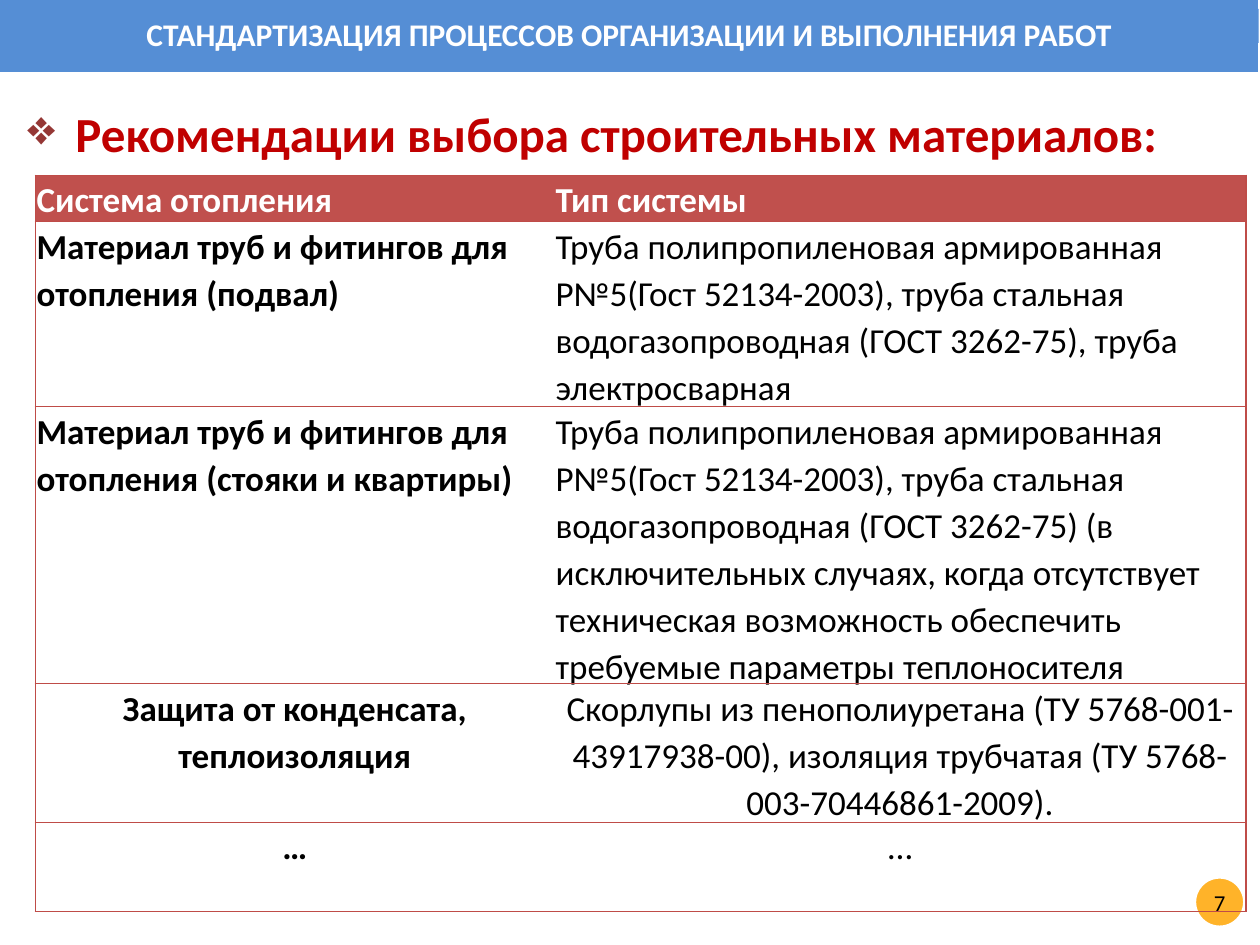
import pptx
import pptx.util
import pptx.dml.color
import pptx.enum.shapes
import pptx.enum.text
import pptx.oxml
import pptx.oxml.ns

Inches = pptx.util.Inches
RGBColor = pptx.dml.color.RGBColor
Align = pptx.enum.text.PP_ALIGN
Shape = pptx.enum.shapes.MSO_SHAPE

WHITE = RGBColor(0xFF, 0xFF, 0xFF)
BLACK = RGBColor(0, 0, 0)
RED = RGBColor(0xC0, 0, 0)
BRICK = RGBColor(0xC0, 0x50, 0x4D)
BORDER = RGBColor(0xBF, 0x4C, 0x48)
BULLET = RGBColor(0x95, 0x37, 0x35)
BLUE = RGBColor(0x55, 0x8E, 0xD5)
AMBER = RGBColor(0xFF, 0xB3, 0x29)


def add_span(para, text, size, color, bold=False):
    span = para.add_run()
    span.text = text
    span.font.name = "Calibri"
    span.font.size = pptx.util.Pt(size)
    span.font.bold = bold
    span.font.color.rgb = color


def add_filled(kind, left, top, width, height, fill, line_width):
    shape = page.shapes.add_shape(
        kind, Inches(left), Inches(top), Inches(width), Inches(height))
    shape.shadow.inherit = False
    shape.fill.solid()
    shape.fill.fore_color.rgb = fill
    if line_width:
        shape.line.color.rgb = WHITE
        shape.line.width = pptx.util.Pt(line_width)
    else:
        shape.line.fill.background()
    return shape


deck = pptx.Presentation()
deck.slide_width = Inches(10)
deck.slide_height = Inches(7.5)
page = deck.slides.add_slide(deck.slide_layouts[6])

heading = page.shapes.add_textbox(Inches(0.12), Inches(0.68), Inches(9.76), Inches(6.46))
heading.text_frame.word_wrap = True
para = heading.text_frame.paragraphs[0]
para.alignment = Align.JUSTIFY
para.line_spacing = 1.2
properties = para._p.get_or_add_pPr()
properties.set("marL", str(Inches(0.38)))
properties.set("indent", str(Inches(-0.38)))
namespace = pptx.oxml.ns.nsdecls("a")
for bullet in (f'<a:buClr {namespace}><a:srgbClr val="{BULLET}"/></a:buClr>',
               f'<a:buChar {namespace} char="❖"/>'):
    properties.append(pptx.oxml.parse_xml(bullet))
add_span(para, "Рекомендации выбора строительных материалов:", 28, RED, True)

badge = add_filled(Shape.OVAL, 9.48, 6.96, 0.4, 0.4, AMBER, 2)
frame = badge.text_frame
frame.margin_left = frame.margin_right = frame.margin_top = frame.margin_bottom = 0
frame.vertical_anchor = pptx.enum.text.MSO_ANCHOR.MIDDLE
frame.paragraphs[0].alignment = Align.CENTER
add_span(frame.paragraphs[0], "7", 13, BLACK)

rows = [
    (0.37, Align.LEFT, "Система отопления", "Тип системы"),
    (1.1, Align.LEFT, "Материал труб и фитингов для отопления (подвал)",
     "Труба полипропиленовая армированная Р№5(Гост 52134-2003), труба стальная "
     "водогазопроводная (ГОСТ 3262-75), труба электросварная"),
    (1.83, Align.LEFT, "Материал труб и фитингов для отопления (стояки и квартиры)",
     "Труба полипропиленовая армированная Р№5(Гост 52134-2003), труба стальная "
     "водогазопроводная (ГОСТ 3262-75) (в исключительных случаях, когда отсутствует "
     "техническая возможность обеспечить требуемые параметры теплоносителя"),
    (1.1, Align.CENTER, "Защита от конденсата, теплоизоляция",
     "Скорлупы из пенополиуретана (ТУ 5768-001-43917938-00), изоляция трубчатая "
     "(ТУ 5768-003-70446861-2009)."),
    (0.71, Align.CENTER, "…", "…"),
]
table = page.shapes.add_table(
    len(rows), 2, Inches(0.28), Inches(1.39), Inches(9.61), Inches(5.11)).table
table.columns[0].width = Inches(4.12)
table.columns[1].width = Inches(5.49)

for row_index, (height, alignment, *texts) in enumerate(rows):
    table.rows[row_index].height = Inches(height)
    header = row_index == 0
    for column_index, text in enumerate(texts):
        cell = table.cell(row_index, column_index)
        cell.margin_left = cell.margin_right = Inches(0.01)
        cell.margin_top = cell.margin_bottom = 0
        para = cell.text_frame.paragraphs[0]
        para.alignment = alignment
        para.line_spacing = 1.1
        add_span(para, text, 20, WHITE if header else BLACK, header or column_index == 0)
        inner_side = "R" if column_index == 0 else "L"
        for side in "LRTB":
            paint = "<a:noFill/>" if side == inner_side else (
                f'<a:solidFill><a:srgbClr val="{BORDER}"/></a:solidFill>')
            cell._tc.get_or_add_tcPr().append(pptx.oxml.parse_xml(
                f'<a:ln{side} {namespace} w="{pptx.util.Pt(0.75)}">{paint}</a:ln{side}>'))
        if header:
            cell.fill.solid()
            cell.fill.fore_color.rgb = BRICK
        else:
            cell.fill.background()

add_filled(Shape.RECTANGLE, -0.01, -0.03, 10, 0.61, BLUE, 1)
banner = add_filled(Shape.RECTANGLE, 0, 0.07, 9.99, 0.27, BLUE, 0)
banner.text_frame.word_wrap = True
banner.text_frame.vertical_anchor = pptx.enum.text.MSO_ANCHOR.TOP
banner.text_frame.auto_size = pptx.enum.text.MSO_AUTO_SIZE.SHAPE_TO_FIT_TEXT
para = banner.text_frame.paragraphs[0]
para.alignment = Align.CENTER
add_span(para, "СТАНДАРТИЗАЦИЯ ПРОЦЕССОВ ОРГАНИЗАЦИИ И ВЫПОЛНЕНИЯ РАБОТ", 18, WHITE, True)

deck.save("out.pptx")
